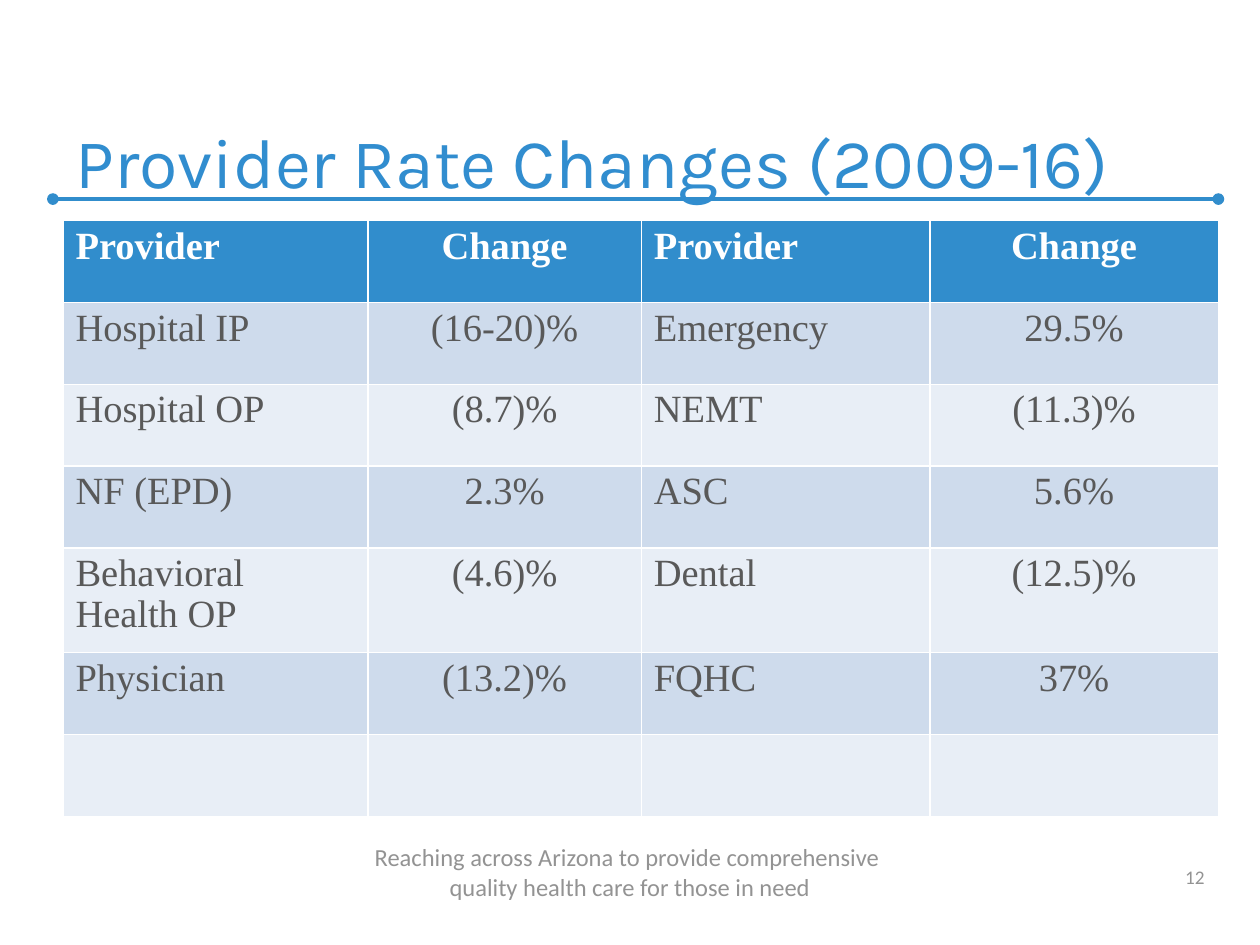
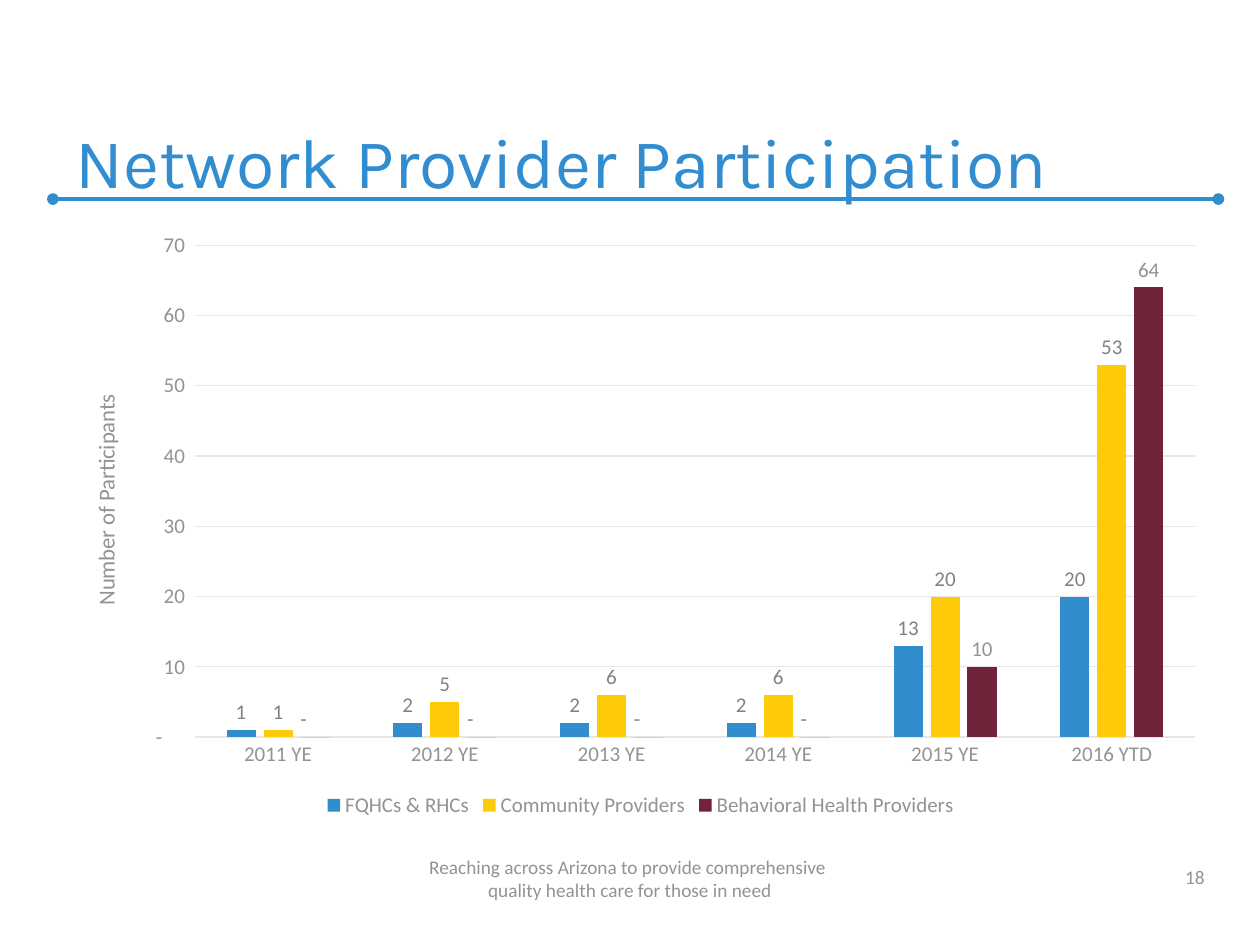
import pptx
import pptx.chart.data
import pptx.dml.color
import pptx.enum.chart
import pptx.enum.shapes
import pptx.enum.text
import pptx.oxml
import pptx.oxml.ns
import pptx.util

Inches = pptx.util.Inches
Pt = pptx.util.Pt
ALIGN = pptx.enum.text.PP_ALIGN

BLUE, TITLE_BLUE = "318DCC", "318DCF"
YELLOW, MAROON = "FFCB08", "702339"
WHITE, DARK_GRAY, LABEL_GRAY, GRAY, GRID_GRAY = "FFFFFF", "595959", "828282", "939393", "E6E6E6"
BANDS = ["CEDBEC", "E8EEF6"]

TITLE_BOX = (0.5, 0.33, 9.08, 1.33)
NUMBER_BOX = (7.33, 6.78, 2.33, 0.32)
FOOTER_BOX = (0, 6.78, 10, 0.42)
TABLE_BOX = (0.5, 1.75, 9.17, 4.73)
CHART_BOX = (0.5, 1.75, 9.17, 4.78)
FOOTER_LINES = ["Reaching across Arizona to provide comprehensive ",
                "quality health care for those in need"]

COLUMN_WIDTHS = [2.42, 2.17, 2.29, 2.29]
ROW_HEIGHT, TALL_ROW_HEIGHT = 0.65, 0.83
RATES = [
    ["Provider", "Change", "Provider", "Change"],
    ["Hospital IP", "(16-20)%", "Emergency", "29.5%"],
    ["Hospital OP", "(8.7)%", "NEMT", "(11.3)%"],
    ["NF (EPD)", "2.3%", "ASC", "5.6%"],
    ["Behavioral Health OP", "(4.6)%", "Dental", "(12.5)%"],
    ["Physician", "(13.2)%", "FQHC", "37%"],
    ["", "", "", ""],
]

YEARS = ["2011 YE", "2012 YE", "2013 YE", "2014 YE", "2015 YE", "2016 YTD"]
PARTICIPANTS = [
    ("FQHCs & RHCs", [1, 2, 2, 2, 13, 20], BLUE),
    ("Community Providers", [1, 5, 6, 6, 20, 53], YELLOW),
    ("Behavioral Health Providers", [0, 0, 0, 0, 10, 64], MAROON),
]
COUNT_FORMAT = '_(* #,##0_);_(* \\(#,##0\\);_(* "-"??_);_(@_)'
PLOT_LAYOUT = {"x": 0.114, "y": 0.041, "w": 0.866, "h": 0.817}


def rgb(value):
    return pptx.dml.color.RGBColor.from_string(value)


def inches(box):
    return [Inches(length) for length in box]


def set_font(font, size, color, name="Calibri", bold=False):
    for key, value in {"size": Pt(size), "name": name, "bold": bold}.items():
        setattr(font, key, value)
    font.color.rgb = rgb(color)


def add_text(slide, box, lines, size, color, name="Calibri", align=ALIGN.LEFT):
    """Add a bottom-anchored text box with line breaks between the lines."""
    frame = slide.shapes.add_textbox(*inches(box)).text_frame
    frame.word_wrap = True
    frame.vertical_anchor = pptx.enum.text.MSO_ANCHOR.BOTTOM
    paragraph = frame.paragraphs[0]
    paragraph.alignment = align
    set_font(paragraph.font, size, color, name)
    for index, line in enumerate(lines):
        if index:
            paragraph.add_line_break()
        run = paragraph.add_run()
        run.text = line
        set_font(run.font, size, color, name)
    return paragraph


def add_title_rule(slide):
    rule = slide.shapes.add_connector(pptx.enum.shapes.MSO_CONNECTOR.STRAIGHT,
                                      *inches((0.42, 1.58, 9.67, 1.58)))
    rule.line.color.rgb = rgb(BLUE)
    rule.line.width = Pt(2.25)
    outline = rule.line._get_or_add_ln()
    for end in ("a:headEnd", "a:tailEnd"):
        outline.append(pptx.oxml.parse_xml(
            f'<{end} {pptx.oxml.ns.nsdecls("a")} type="oval"/>'))
    rule._element.spPr.append(pptx.oxml.parse_xml(
        f'<a:effectLst {pptx.oxml.ns.nsdecls("a")}/>'))


def add_framed_slide(presentation, title, number, footer_size):
    """Add a slide with the shared rule, title, number and footer."""
    slide = presentation.slides.add_slide(presentation.slide_layouts[6])
    add_title_rule(slide)
    add_text(slide, TITLE_BOX, [title], 40, TITLE_BLUE, "Karla")
    add_text(slide, NUMBER_BOX, [str(number)], 11, GRAY, align=ALIGN.RIGHT)
    add_text(slide, FOOTER_BOX, FOOTER_LINES, footer_size, GRAY, align=ALIGN.CENTER)
    return slide


def add_rate_table(slide, box):
    table = slide.shapes.add_table(len(RATES), len(COLUMN_WIDTHS), *inches(box)).table
    for column, width in zip(table.columns, COLUMN_WIDTHS):
        column.width = Inches(width)
    for row_index, (row, texts) in enumerate(zip(table.rows, RATES)):
        header = row_index == 0
        wraps = len(texts[0]) > 15
        row.height = Inches(TALL_ROW_HEIGHT if wraps else ROW_HEIGHT)
        for column_index, (cell, text) in enumerate(zip(row.cells, texts)):
            cell.fill.solid()
            cell.fill.fore_color.rgb = rgb(BLUE if header else BANDS[(row_index - 1) % 2])
            if not text:
                continue
            paragraph = cell.text_frame.paragraphs[0]
            paragraph.alignment = ALIGN.CENTER if column_index % 2 else ALIGN.LEFT
            paragraph.line_spacing = 0.95
            run = paragraph.add_run()
            run.text = text
            set_font(run.font, 22, WHITE if header else DARK_GRAY, "Times New Roman", header)


def style_axes(chart):
    value_axis, category_axis = chart.value_axis, chart.category_axis
    for axis in (value_axis, category_axis):
        axis.major_tick_mark = pptx.enum.chart.XL_TICK_MARK.NONE
        set_font(axis.tick_labels.font, 12, GRAY)
    for line in (category_axis.format.line, value_axis.major_gridlines.format.line):
        line.color.rgb = rgb(GRID_GRAY)
        line.width = Pt(0.75)
    value_axis.format.line.fill.background()
    for key, value in {"minimum_scale": 0, "maximum_scale": 70, "major_unit": 10}.items():
        setattr(value_axis, key, value)
    value_axis.tick_labels.number_format = COUNT_FORMAT
    value_axis.tick_labels.number_format_is_linked = False
    title = value_axis.axis_title.text_frame.paragraphs[0].add_run()
    title.text = "Number of Participants"
    set_font(title.font, 13, GRAY)


def style_series(series, color):
    series.format.fill.solid()
    series.format.fill.fore_color.rgb = rgb(color)
    labels = series.data_labels
    for key, value in {"show_value": True, "number_format": COUNT_FORMAT,
                       "number_format_is_linked": False,
                       "position": pptx.enum.chart.XL_LABEL_POSITION.OUTSIDE_END}.items():
        setattr(labels, key, value)
    set_font(labels.font, 12, LABEL_GRAY)


def set_plot_layout(chart):
    """Fix the inner plot area as fractions of the chart."""
    plot_area = chart._chartSpace.chart.plotArea
    for layout in plot_area.findall(pptx.oxml.ns.qn("c:layout")):
        plot_area.remove(layout)
    sizes = "".join(f'<c:{key} val="{value}"/>' for key, value in PLOT_LAYOUT.items())
    plot_area.insert(0, pptx.oxml.parse_xml(
        f'<c:layout {pptx.oxml.ns.nsdecls("c")}><c:manualLayout>'
        '<c:layoutTarget val="inner"/><c:xMode val="edge"/><c:yMode val="edge"/>'
        f'{sizes}</c:manualLayout></c:layout>'))


def add_participation_chart(slide, box):
    data = pptx.chart.data.CategoryChartData(number_format=COUNT_FORMAT)
    data.categories = YEARS
    for name, values, _ in PARTICIPANTS:
        data.add_series(name, values)
    chart = slide.shapes.add_chart(pptx.enum.chart.XL_CHART_TYPE.COLUMN_CLUSTERED,
                                   *inches(box), data).chart
    set_font(chart.font, 10, DARK_GRAY)
    chart.has_title = False
    chart.has_legend = True
    chart.legend.position = pptx.enum.chart.XL_LEGEND_POSITION.BOTTOM
    chart.legend.include_in_layout = False
    set_font(chart.legend.font, 12, GRAY)
    plot = chart.plots[0]
    for key, value in {"gap_width": 219, "overlap": -27, "vary_by_categories": False}.items():
        setattr(plot, key, value)
    style_axes(chart)
    for series, (_, _, color) in zip(plot.series, PARTICIPANTS):
        style_series(series, color)
    for index in (4, 5):
        set_font(plot.series[2].points[index].data_label.font, 12, GRAY)
    set_plot_layout(chart)


def main():
    presentation = pptx.Presentation()
    presentation.slide_width, presentation.slide_height = Inches(10), Inches(7.5)
    add_rate_table(add_framed_slide(presentation, "Provider Rate Changes (2009-16)", 12, 14),
                   TABLE_BOX)
    add_participation_chart(
        add_framed_slide(presentation, "Network Provider Participation", 18, 11), CHART_BOX)
    presentation.save("out.pptx")


if __name__ == "__main__":
    main()
